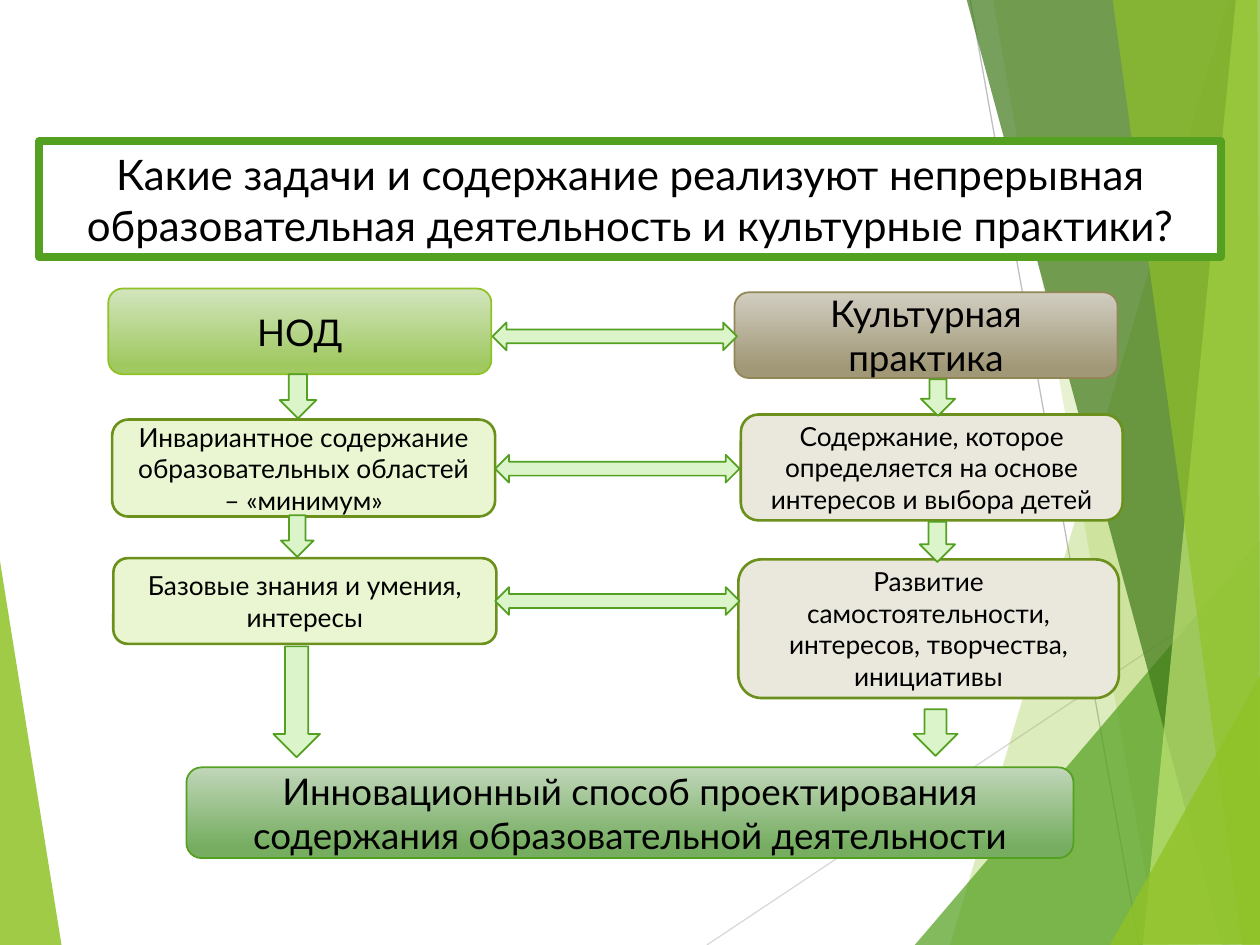
from pptx import Presentation
from pptx.dml.color import RGBColor
from pptx.enum.shapes import MSO_CONNECTOR as Connector, MSO_SHAPE as Shape
from pptx.enum.text import MSO_ANCHOR as Anchor, PP_ALIGN as Align
from pptx.oxml.ns import qn
from pptx.util import Inches, Pt
from lxml.etree import SubElement

COLORS = {
    "white": "FFFFFF", "text": "000000", "lime": "90C226", "green": "54A021",
    "forest": "3F7819", "pale_lime": "C0E474", "olive": "6B901C", "sand": "918655",
    "mint": "DBF4CA", "light_lime": "EAF6D1", "light_sand": "EAE8DC",
    "lime_top": "D3E5BE", "lime_base": "A0C962", "sand_top": "D1CDC0",
    "sand_base": "A19877", "green_top": "C0D6B9", "green_base": "76AD61",
    "ray": "D9D9D9", "dark_ray": "BFBFBF",
}
FRAME = {"word_wrap": True, "vertical_anchor": Anchor.MIDDLE}


class SlideStyle:
    """Draws the elements of one slide in a shared style."""

    def __init__(self, slide, font="Lato"):
        self.shapes = slide.shapes
        self.font = font

    def color(self, name):
        return RGBColor.from_string(COLORS[name])

    def facet(self, color, opacity, points):
        corners = [(Inches(x), Inches(y)) for x, y in points]
        builder = self.shapes.build_freeform(*corners[0], scale=1.0)
        builder.add_line_segments(corners[1:], close=True)
        facet = builder.convert_to_shape()
        facet.shadow.inherit = False
        facet.line.fill.background()
        facet.fill.solid()
        facet.fill.fore_color.rgb = self.color(color)
        tint = next(facet._element.spPr.iter(qn("a:srgbClr")))
        SubElement(tint, qn("a:alpha"), val=str(opacity * 1000))

    def ray(self, color, start, end):
        ray = self.shapes.add_connector(
            Connector.STRAIGHT, *(Inches(value) for value in start + end))
        ray.line.color.rgb = self.color(color)
        ray.line.width = Pt(0.75)
        SubElement(ray._element.spPr, qn("a:effectLst"))

    def block(self, kind, box, fill, line, width=1):
        block = self.shapes.add_shape(kind, *(Inches(value) for value in box))
        block.shadow.inherit = False
        if isinstance(fill, tuple):
            block.fill.gradient()
            block.fill.gradient_angle = 270
            for stop, name, position in zip(block.fill.gradient_stops, fill, (0, 0.88)):
                stop.color.rgb = self.color(name)
                stop.position = position
        else:
            block.fill.solid()
            block.fill.fore_color.rgb = self.color(fill)
        block.line.color.rgb = self.color(line)
        block.line.width = Pt(width)
        return block

    def label(self, text, size, box, fill, line, width=1, kind=Shape.ROUNDED_RECTANGLE):
        frame = self.block(kind, box, fill, line, width).text_frame
        for name, value in FRAME.items():
            setattr(frame, name, value)
        paragraph = frame.paragraphs[0]
        paragraph.alignment = Align.CENTER
        run = paragraph.add_run()
        run.text = text
        for name, value in {"name": self.font, "size": Pt(size)}.items():
            setattr(run.font, name, value)
        run.font.color.rgb = self.color("text")

    def arrow(self, kind, box):
        self.block(kind, box, "mint", "green")


def draw_backdrop(style):
    style.facet("lime", 85, [(-0.01, 4.39), (0.49, 7.51), (-0.01, 7.5)])
    style.ray("ray", (5.61, 7.5), (10.01, 4.57))
    style.ray("dark_ray", (7.7, 0), (9.04, 7.5))
    facets = [
        ("lime", 30, [(9.75, 0), (7.54, 7.5), (10.02, 7.51), (10.01, 0.01)]),
        ("lime", 20, [(7.88, -0.01), (9.19, 7.5), (10.01, 7.5), (10.01, -0.01)]),
        ("green", 72, [(7.26, 7.5), (10, 4.29), (10.01, 7.5)]),
        ("forest", 70, [(7.67, -0.01), (9.7, 7.5), (10.01, 7.49), (10.01, -0.01)]),
        ("pale_lime", 70, [(9.81, -0.01), (9.07, 7.5), (10.01, 7.5), (10, -0.01)]),
        ("lime", 65, [(8.83, -0.01), (9.86, 7.5), (10, 7.5), (9.98, -0.01)]),
        ("lime", 80, [(8.81, 7.5), (10.01, 5.35), (10.01, 7.49)]),
    ]
    for facet in facets:
        style.facet(*facet)


def draw_scheme(style):
    style.label("Какие задачи и содержание реализуют непрерывная образовательная "
                "деятельность и культурные практики?",
                24, (0.31, 1.12, 9.38, 0.92), "white", "green", 4.5, Shape.RECTANGLE)
    headings = [
        ("НОД", (0.86, 2.29, 3.04, 0.68), ("lime_top", "lime_base"), "lime"),
        ("Культурная практика", (5.83, 2.32, 3.04, 0.68),
         ("sand_top", "sand_base"), "sand"),
        ("Инновационный способ проектирования содержания образовательной деятельности",
         (1.48, 6.09, 7.04, 0.72), ("green_top", "green_base"), "green"),
    ]
    for text, box, fill, line in headings:
        style.label(text, 21, box, fill, line)
    details = [
        ("Инвариантное содержание образовательных областей – «минимум»",
         (0.89, 3.33, 3.04, 0.77), "light_lime"),
        ("Содержание, которое определяется на основе интересов и выбора детей",
         (5.88, 3.29, 3.03, 0.84), "light_sand"),
        ("Базовые знания и умения, интересы", (0.9, 4.43, 3.04, 0.68), "light_lime"),
        ("Развитие самостоятельности, интересов, творчества, инициативы",
         (5.86, 4.44, 3.02, 1.1), "light_sand"),
    ]
    for text, box, fill in details:
        style.label(text, 15, box, fill, "olive", 1.5)
    for row, left in enumerate((3.91, 3.93, 3.93)):
        style.arrow(Shape.LEFT_RIGHT_ARROW, (left, 2.56 + 1.05 * row, 1.94, 0.22))
    steps = [
        (7.25, 5.63, 0.35, 0.37), (2.17, 5.13, 0.37, 0.88), (2.23, 4.09, 0.26, 0.33),
        (2.22, 2.97, 0.29, 0.35), (7.3, 4.14, 0.28, 0.32), (7.31, 3.01, 0.27, 0.29),
    ]
    for box in steps:
        style.arrow(Shape.DOWN_ARROW, box)


def main():
    deck = Presentation()
    deck.slide_width, deck.slide_height = Inches(10), Inches(7.5)
    style = SlideStyle(deck.slides.add_slide(deck.slide_layouts[6]))
    draw_backdrop(style)
    draw_scheme(style)
    deck.save("out.pptx")


if __name__ == "__main__":
    main()
